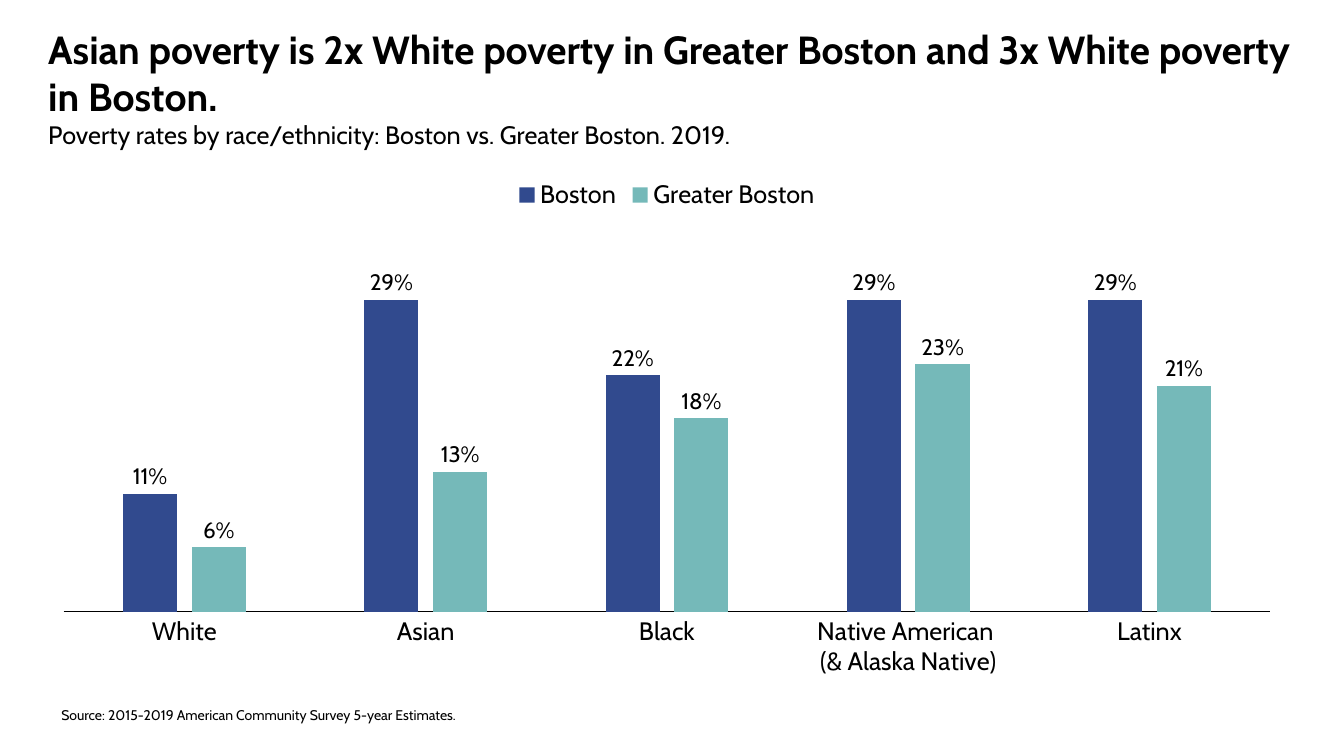
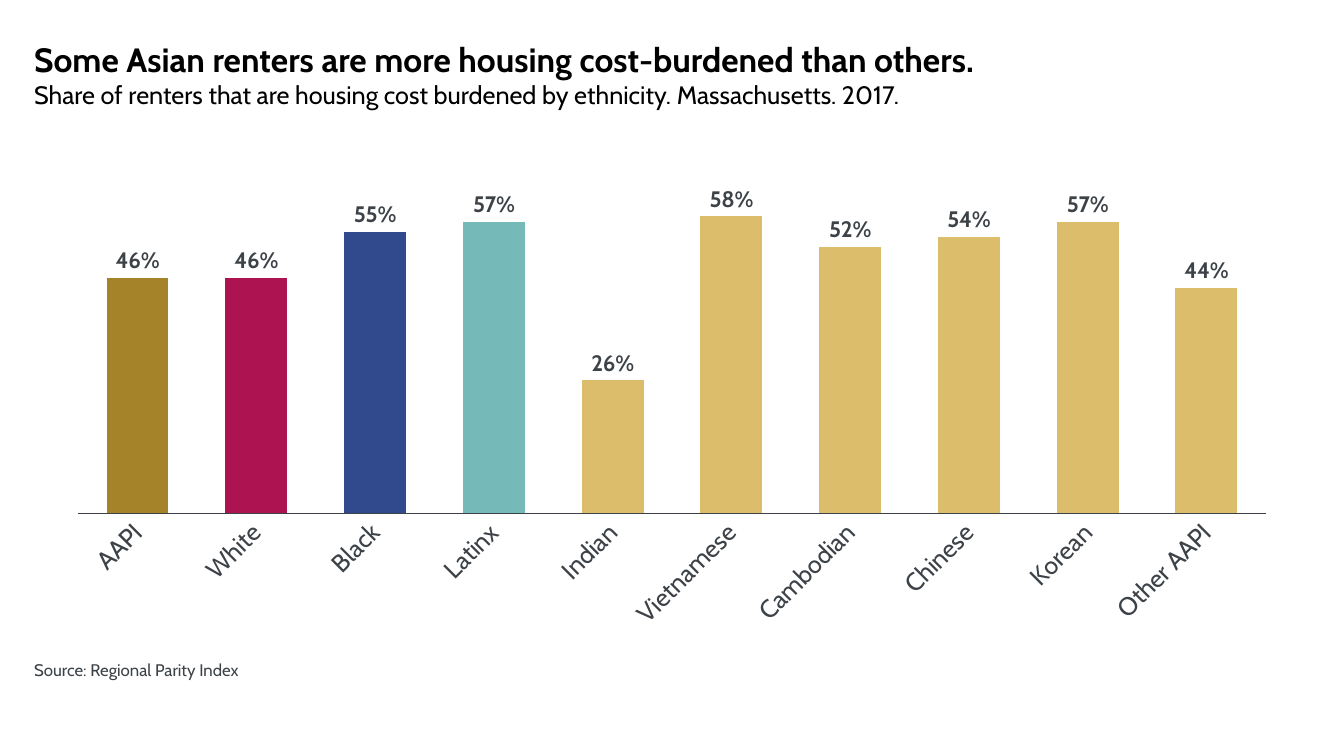
from dataclasses import dataclass

from pptx import Presentation
from pptx.chart.data import CategoryChartData as Data
from pptx.dml.color import RGBColor as Rgb
from pptx.enum.chart import XL_CHART_TYPE as Kind
from pptx.enum.chart import XL_LABEL_POSITION as Spot
from pptx.enum.chart import XL_LEGEND_POSITION as Side
from pptx.enum.chart import XL_TICK_MARK as Tick
from pptx.enum.text import MSO_ANCHOR as Anchor
from pptx.oxml import parse_xml
from pptx.oxml.ns import nsdecls
from pptx.util import Inches, Pt


@dataclass(frozen=True)
class Theme:
    font: str = "Cabin"
    black: str = "000000"
    gray: str = "3C4247"
    blue: str = "314A8E"
    teal: str = "75B9B9"
    gold: str = "A58328"
    sand: str = "DBBD6C"
    red: str = "AE1351"
    large: int = 28
    title: int = 24
    body: int = 18
    label: int = 16
    note: int = 12
    small: int = 10


T = Theme()


def style(font, size, color, bold=False):
    font.name = T.font
    font.size = Pt(size)
    font.bold = bold
    font.color.rgb = Rgb.from_string(color)


def write(slide, box, lines, color=T.black, anchor=Anchor.TOP, before=0):
    frame = slide.shapes.add_textbox(*map(Inches, box)).text_frame
    frame.word_wrap = True
    frame.vertical_anchor = anchor
    para = frame.paragraphs[0]
    para.space_before = Pt(before)
    for row, (text, size, bold) in enumerate(lines):
        if row:
            para.add_line_break()
        run = para.add_run()
        run.text = text
        style(run.font, size, color, bold)


def head(slide, box, title, sub, size):
    lines = [(title, size, True), (sub, T.body, False)]
    write(slide, box, lines, anchor=Anchor.BOTTOM, before=6)


def paint(item, color):
    item.format.fill.solid()
    item.format.fill.fore_color.rgb = Rgb.from_string(color)


def place(chart, plot):
    area = chart._chartSpace.chart.plotArea
    for old in area.xpath("./c:layout"):
        area.remove(old)
    spots = "".join(f'<c:{key} val="{val}"/>' for key, val in zip("xywh", plot))
    area.insert(0, parse_xml(
        f'<c:layout {nsdecls("c")}><c:manualLayout><c:layoutTarget val="inner"/>'
        f'<c:xMode val="edge"/><c:yMode val="edge"/>{spots}'
        "</c:manualLayout></c:layout>"))


def columns(slide, box, cats, series, top, gap, plot=None, color=T.black,
            bold=False, legend=False, tilt=0):
    data = Data(number_format="0%")
    data.categories = cats
    for name, vals, _ in series:
        data.add_series(name, [val / 100 for val in vals])
    chart = slide.shapes.add_chart(
        Kind.COLUMN_CLUSTERED, *map(Inches, box), data).chart
    style(chart.font, T.small, color)
    chart.has_title = False
    chart.has_legend = legend
    if legend:
        chart.legend.position = Side.TOP
        chart.legend.include_in_layout = False
        style(chart.legend.font, T.body, color)

    axis = chart.category_axis
    axis.major_tick_mark = axis.minor_tick_mark = Tick.NONE
    axis.format.line.color.rgb = Rgb.from_string(color)
    axis.format.line.width = Pt(0.75)
    style(axis.tick_labels.font, T.body, color)
    for body in chart._chartSpace.xpath(".//c:catAx/c:txPr/a:bodyPr"):
        body.set("rot", str(tilt * 60000))

    scale = chart.value_axis
    scale.minimum_scale, scale.maximum_scale = 0, top
    scale.has_major_gridlines = False
    scale.visible = False

    bars = chart.plots[0]
    bars.gap_width, bars.overlap = gap, -27
    bars.vary_by_categories = False
    for item, (_, _, fills) in zip(bars.series, series):
        paint(item, fills[0])
        if len(fills) > 1:
            for spot, fill in enumerate(fills):
                paint(item.points[spot], fill)
        labels = item.data_labels
        labels.show_value = True
        labels.position = Spot.OUTSIDE_END
        labels.number_format = "0%"
        labels.number_format_is_linked = False
        style(labels.font, T.label, color, bold)
    if plot:
        place(chart, plot)


def poverty(slide):
    head(slide, (0.38, 0.77, 12.58, 0.76),
         "Asian poverty is 2x White poverty in Greater Boston and 3x White poverty in Boston.",
         "Poverty rates by race/ethnicity: Boston vs. Greater Boston. 2019.", T.large)
    columns(slide, (0.51, 1.66, 12.21, 5.19),
            ["White", "Asian", "Black", "Native American \n(& Alaska Native)", "Latinx"],
            [("Boston", (11, 29, 22, 29, 29), [T.blue]),
             ("Greater Boston", (6, 13, 18, 23, 21), [T.teal])],
            plot=(0.01, 0.13, 0.98, 0.72), top=0.35, gap=219, legend=True)
    write(slide, (0.51, 6.96, 5.84, 0.27),
          [("Source: 2015-2019 American Community Survey 5-year Estimates.", T.small, False)])


def renters(slide):
    head(slide, (0.24, 0.38, 12.84, 0.76),
         "Some Asian renters are more housing cost-burdened than others.",
         "Share of renters that are housing cost burdened by ethnicity. Massachusetts. 2017.",
         T.title)
    columns(slide, (0.53, 1.44, 12.27, 4.9),
            ["AAPI", "White", "Black", "Latinx", "Indian", "Vietnamese",
             "Cambodian", "Chinese", "Korean", "Other AAPI"],
            [("Series 1", (46, 46, 55, 57, 26, 58, 52, 54, 57, 44),
              [T.gold, T.red, T.blue, T.teal] + [T.sand] * 6)],
            top=0.7, gap=92, color=T.gray, bold=True, tilt=-45)
    write(slide, (0.24, 6.5, 4.65, 0.3),
          [("Source: Regional Parity Index", T.note, False)], color=T.gray)


def main():
    deck = Presentation()
    deck.slide_width, deck.slide_height = Inches(13.33), Inches(7.5)
    for build in (poverty, renters):
        build(deck.slides.add_slide(deck.slide_layouts[6]))
    deck.save("out.pptx")


if __name__ == "__main__":
    main()
